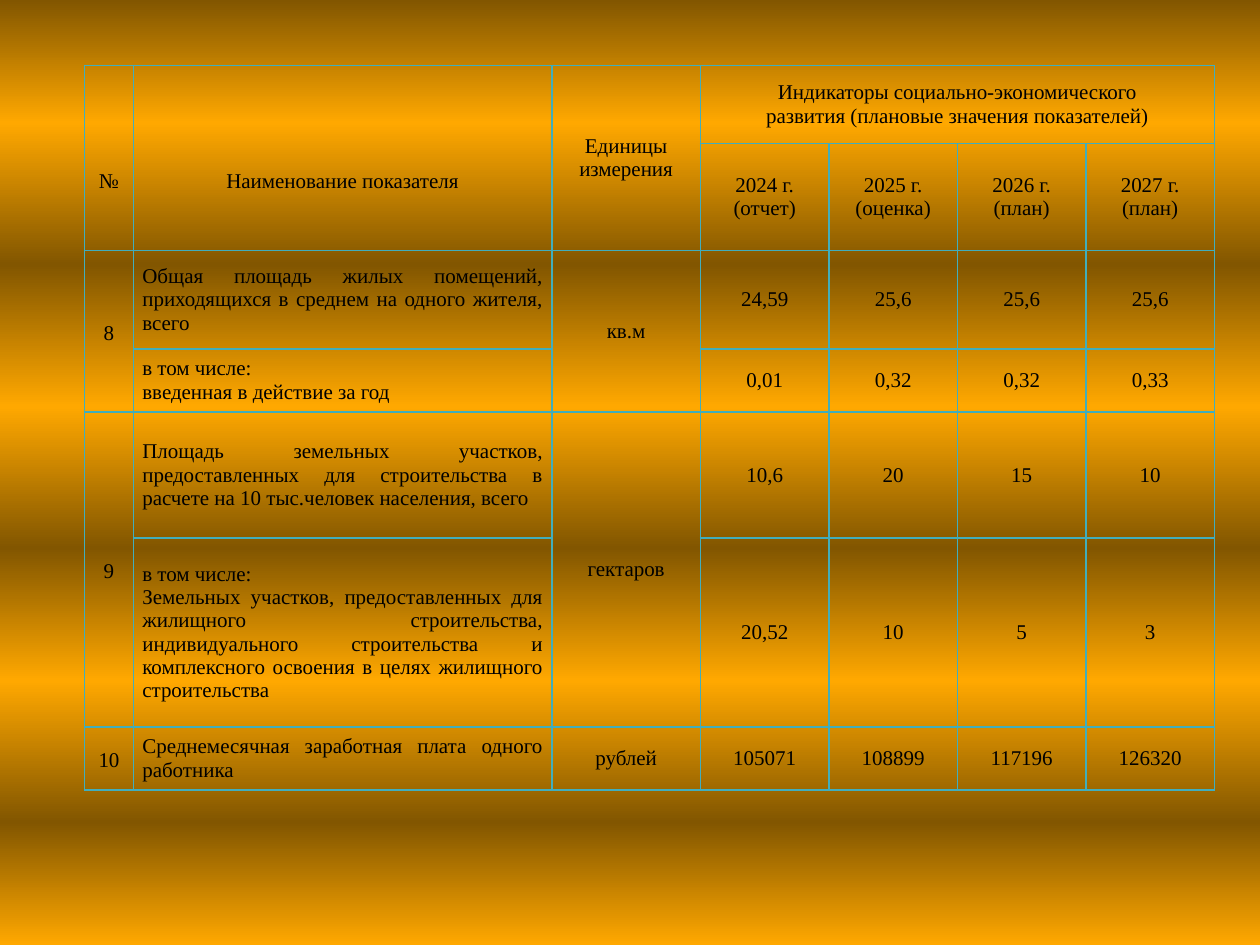
from lxml import etree
from pptx import Presentation
from pptx.dml.color import RGBColor
from pptx.enum.text import MSO_ANCHOR, PP_ALIGN
from pptx.oxml.ns import qn
from pptx.util import Inches, Pt

CENTER, JUSTIFY = PP_ALIGN.CENTER, PP_ALIGN.JUSTIFY
MIDDLE = MSO_ANCHOR.MIDDLE
BLACK = RGBColor(0x00, 0x00, 0x00)
BROWN = RGBColor(0x82, 0x56, 0x00)
AMBER = RGBColor(0xFF, 0xA8, 0x00)
TEAL = RGBColor(0x41, 0xAE, 0xBD)

BAND_STOPS = [0, 13, 28, 43, 58, 72, 87, 100]  # percent, brown and amber in turn
FONT = {"name": "Times New Roman", "size": Pt(12)}

LEFT, TOP = 0.67, 0.52
COL_WIDTHS = [0.39, 3.32, 1.18] + [1.02] * 4
ROW_HEIGHTS = [0.62, 0.85, 0.78, 0.5, 1, 1.5, 0.5]
HEADER_ROWS = 2
MERGES = [  # first cell, last cell
    ((0, 0), (1, 0)), ((0, 1), (1, 1)), ((0, 2), (1, 2)), ((0, 3), (0, 6)),
    ((2, 0), (3, 0)), ((2, 2), (3, 2)), ((4, 0), (5, 0)), ((4, 2), (5, 2)),
]
LOWERED = [(0, 0), (0, 1)]  # header cells whose text sits below the middle

ROWS = [
    ["№", "Наименование показателя", "Единицы\nизмерения",
     "Индикаторы социально-экономического\nразвития (плановые значения показателей)", "", "", ""],
    ["", "", "", "2024 г. (отчет)", "2025 г. (оценка)", "2026 г. (план)", "2027 г. (план)"],
    ["8", "Общая площадь жилых помещений, приходящихся в среднем на одного жителя, всего",
     "кв.м", "24,59", "25,6", "25,6", "25,6"],
    ["", "в том числе:\nвведенная в действие за год", "", "0,01", "0,32", "0,32", "0,33"],
    ["9", "Площадь земельных участков, предоставленных для строительства в расчете "
     "на 10 тыс.человек населения, всего", "гектаров", "10,6", "20", "15", "10"],
    ["", "в том числе:\nЗемельных участков, предоставленных для жилищного строительства, "
     "индивидуального строительства и комплексного освоения в целях жилищного строительства",
     "", "20,52", "10", "5", "3"],
    ["10", "Среднемесячная заработная плата одного работника",
     "рублей", "105071", "108899", "117196", "126320"],
]


def paint_background(slide):
    fill = slide.background.fill
    fill.gradient()
    fill.gradient_angle = 270
    stops = slide.element.find(".//" + qn("a:gsLst"))
    for old in list(stops):
        stops.remove(old)
    for i, percent in enumerate(BAND_STOPS):
        stop = etree.SubElement(stops, qn("a:gs"), pos=str(percent * 1000))
        etree.SubElement(stop, qn("a:srgbClr"), val=str((BROWN, AMBER)[i % 2]))


def add_borders(cell):
    props = cell._tc.get_or_add_tcPr()
    for i, side in enumerate(("lnL", "lnR", "lnT", "lnB")):
        line = etree.Element(qn("a:" + side), w=str(Pt(1)))
        fill = etree.SubElement(line, qn("a:solidFill"))
        etree.SubElement(fill, qn("a:srgbClr"), val=str(TEAL))
        props.insert(i, line)


def format_cell(cell, text, row, col):
    header = row < HEADER_ROWS
    side, edge = (0.1, 0.05) if header else (0.07, 0)
    top = 0.42 if (row, col) in LOWERED else edge
    layout = {"margin_left": side, "margin_right": side, "margin_top": top, "margin_bottom": edge}
    for name, inches in layout.items():
        setattr(cell, name, Inches(inches))
    cell.vertical_anchor = MIDDLE
    cell.fill.background()
    add_borders(cell)
    cell.text_frame.text = text
    for p in cell.text_frame.paragraphs:
        p.alignment = JUSTIFY if col == 1 and not header else CENTER
        if col == 0 and not header:
            p.line_spacing = 1.15
        for name, value in FONT.items():
            setattr(p.font, name, value)
        for r in p.runs:
            for name, value in FONT.items():
                setattr(r.font, name, value)
            r.font.color.rgb = BLACK


def add_indicator_table(slide):
    frame = slide.shapes.add_table(
        len(ROW_HEIGHTS), len(COL_WIDTHS), Inches(LEFT), Inches(TOP),
        Inches(sum(COL_WIDTHS)), Inches(sum(ROW_HEIGHTS)))
    table = frame.table
    table.first_row = table.horz_banding = False
    for column, width in zip(table.columns, COL_WIDTHS):
        column.width = Inches(width)
    for row, height in zip(table.rows, ROW_HEIGHTS):
        row.height = Inches(height)
    for i, texts in enumerate(ROWS):
        for j, text in enumerate(texts):
            format_cell(table.cell(i, j), text, i, j)
    for first, last in MERGES:
        table.cell(*first).merge(table.cell(*last))


def main():
    prs = Presentation()
    prs.slide_width, prs.slide_height = Inches(10), Inches(7.5)
    slide = prs.slides.add_slide(prs.slide_layouts[6])
    paint_background(slide)
    add_indicator_table(slide)
    prs.save("out.pptx")


if __name__ == "__main__":
    main()
